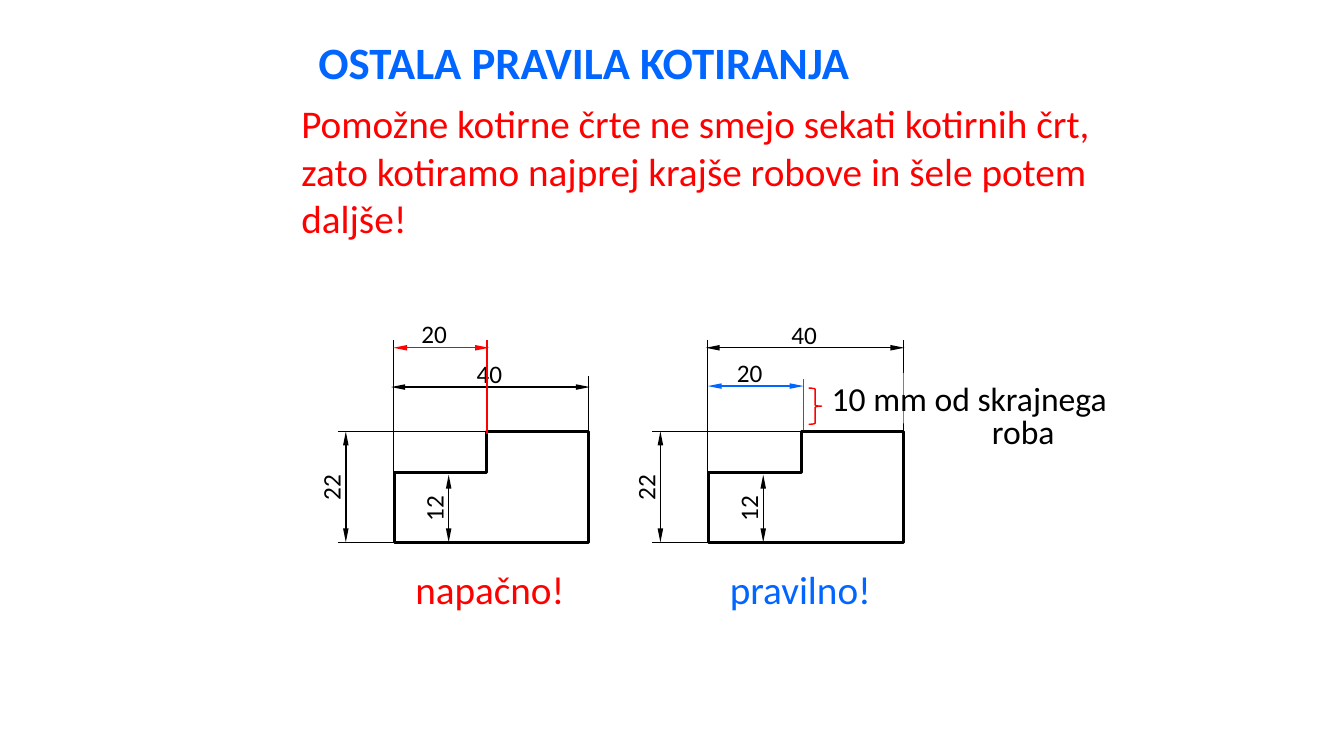
"""Build the slide on dimensioning rules with a wrong and a right drawing."""
from dataclasses import dataclass

from lxml import etree
from pptx import Presentation
from pptx.dml.color import RGBColor
from pptx.enum.shapes import MSO_CONNECTOR, MSO_SHAPE
from pptx.enum.text import MSO_ANCHOR, MSO_AUTO_SIZE
from pptx.oxml.ns import qn
from pptx.util import Inches, Pt


@dataclass(frozen=True)
class Theme:
    font: str = "Calibri"
    black: RGBColor = RGBColor(0, 0, 0)
    white: RGBColor = RGBColor(255, 255, 255)
    red: RGBColor = RGBColor(255, 0, 0)
    blue: RGBColor = RGBColor(0, 0x66, 255)
    title: int = 32
    body: int = 28
    note: int = 24
    dimension: int = 18
    thin: float = 1
    thick: float = 2.25


theme = Theme()
presentation = Presentation()
presentation.slide_width = Inches(13.33)
presentation.slide_height = Inches(7.5)
slide = presentation.slides.add_slide(presentation.slide_layouts[6])


def add_text(text, left, top, width, height, size=theme.dimension,
             color=theme.black, bold=False, wrap=False, rotation=0):
    shape = slide.shapes.add_textbox(
        Inches(left), Inches(top), Inches(width), Inches(height))
    shape.rotation = rotation
    frame = shape.text_frame
    frame.word_wrap = wrap
    frame.auto_size = MSO_AUTO_SIZE.SHAPE_TO_FIT_TEXT
    frame.vertical_anchor = MSO_ANCHOR.TOP
    run = frame.paragraphs[0].add_run()
    run.text = text
    run.font.name = theme.font
    run.font.size = Pt(size)
    run.font.bold = bold
    run.font.color.rgb = color
    return shape


def add_line(start_x, start_y, end_x, end_y, color=theme.black, arrows=False):
    line = slide.shapes.add_connector(
        MSO_CONNECTOR.STRAIGHT, Inches(start_x), Inches(start_y),
        Inches(end_x), Inches(end_y))
    line.line.color.rgb = color
    line.line.width = Pt(theme.thin)
    if arrows:
        for end in ("a:headEnd", "a:tailEnd"):
            etree.SubElement(line.line._get_or_add_ln(), qn(end),
                             type="triangle", w="sm", len="lg")
    etree.SubElement(line._element.spPr, qn("a:effectLst"))


add_text("OSTALA PRAVILA KOTIRANJA", 3.06, 0.3, 6.92, 0.64,
         size=theme.title, color=theme.blue, bold=True, wrap=True)
add_text("Pomožne kotirne črte ne smejo sekati kotirnih črt, zato kotiramo "
         "najprej krajše robove in šele potem daljše!",
         2.89, 0.94, 8.11, 1.51, size=theme.body, color=theme.red, wrap=True)

part_top, step_y, part_bottom = 4.28, 4.69, 5.38
extension_top = 3.37
part_outline = [(1.94, part_bottom), (0.01, part_bottom), (0.01, step_y),
                (0.93, step_y), (0.93, part_top), (1.94, part_top)]

for part_left in (3.9, 7.02):
    add_line(part_left - 0.55, part_top, part_left + 0.95, part_top)
    add_line(part_left - 0.55, part_bottom, part_left, part_bottom)
    add_line(part_left, 4.71, part_left, extension_top)
    for text, text_left, text_top, arrow_x, arrow_top in (
            ("22", -0.86, 4.62, -0.47, part_top), ("12", 0.16, 4.83, 0.55, 4.71)):
        add_text(text, part_left + text_left, text_top, 0.48, 0.4, rotation=270)
        add_line(part_left + arrow_x, arrow_top,
                 part_left + arrow_x, part_bottom, arrows=True)

    points = [(Inches(part_left + x), Inches(y)) for x, y in part_outline]
    builder = slide.shapes.build_freeform(*points[0])
    builder.add_line_segments(points[1:], close=True)
    part = builder.convert_to_shape()
    part.shadow.inherit = False
    part.fill.background()
    part.line.color.rgb = theme.black
    part.line.width = Pt(theme.thick)

for start_x, end_x, y, color in (
        (3.9, 4.85, 3.45, theme.red), (3.88, 5.85, 3.84, theme.black),
        (7.02, 7.97, 3.83, theme.blue), (7, 8.97, 3.45, theme.black)):
    add_line(start_x, y, end_x, y, color=color, arrows=True)

for text, left, top in (("20", 4.08, 3.11), ("40", 4.63, 3.51),
                        ("20", 7.21, 3.5), ("40", 7.75, 3.12)):
    add_text(text, left, top, 0.48, 0.4)

for x, bottom, top, color in (
        (5.84, part_top, 3.73, theme.black), (4.83, 4.31, extension_top, theme.red),
        (8.96, part_top, extension_top, theme.black), (7.97, 4.27, 3.76, theme.blue)):
    add_line(x, bottom, x, top, color=color)

for text, left, width, color in (("napačno!", 4.02, 1.82, theme.red),
                                 ("pravilno!", 7.14, 1.69, theme.blue)):
    add_text(text, left, 5.56, width, 0.57, size=theme.body, color=color)

brace = slide.shapes.add_shape(
    MSO_SHAPE.RIGHT_BRACE, Inches(8.02), Inches(3.85), Inches(0.13), Inches(0.36))
brace.shadow.inherit = False
brace.fill.background()
brace.line.color.rgb = theme.red
brace.line.width = Pt(theme.thin)

edge_note = add_text("10 mm od skrajnega", 8.15, 3.7, 3.38, 0.5,
                     size=theme.note, wrap=True)
edge_note.fill.solid()
edge_note.fill.fore_color.rgb = theme.white
note_color = edge_note._element.spPr.find(qn("a:solidFill"))[0]
etree.SubElement(note_color, qn("a:alpha"), val="50000")
add_text("roba", 9.74, 4.03, 0.88, 0.5, size=theme.note)

presentation.save("out.pptx")
